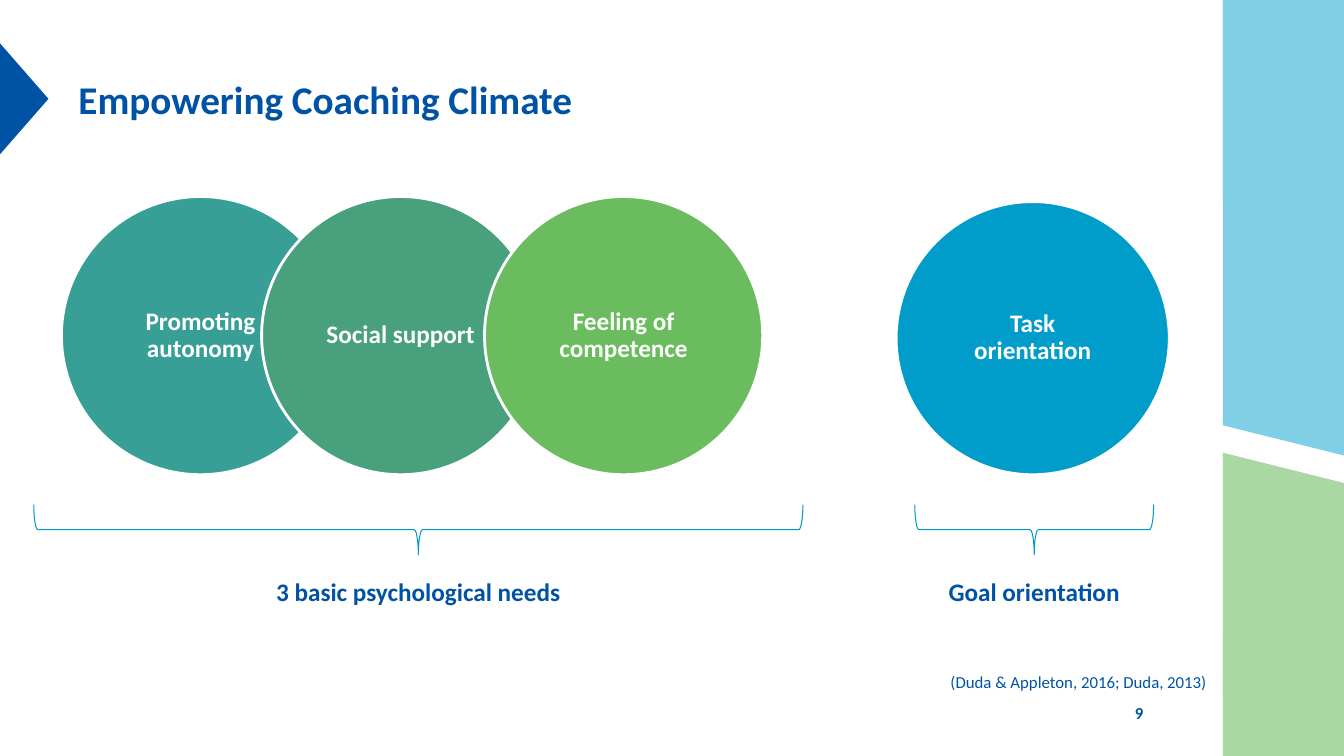
from pptx import Presentation
from pptx.dml.color import RGBColor
from pptx.enum.shapes import MSO_SHAPE as SHAPE
from pptx.enum.text import MSO_ANCHOR as ANCHOR, PP_ALIGN as ALIGN
from pptx.util import Pt

COLORS = {
    "navy": "0053A4", "sky": "81CEE7", "mint": "A9D8A2", "white": "FFFFFF",
    "teal": "379F96", "sea": "48A07D", "green": "6BBC5F", "blue": "009DCA",
    "brace": "009AC6",
}


def color(name):
    return RGBColor.from_string(COLORS[name])


def add_shape(slide, kind, box, fill=None, line=None, line_width=1, rotation=0):
    x, y, w, h = box
    if rotation in (90, 270):
        x, y, w, h = x + (w - h) / 2, y + (h - w) / 2, h, w
    sp = slide.shapes.add_shape(kind, Pt(x), Pt(y), Pt(w), Pt(h))
    sp.shadow.inherit = False
    sp.rotation = rotation
    if fill:
        sp.fill.solid()
        sp.fill.fore_color.rgb = color(fill)
    else:
        sp.fill.background()
    if line:
        sp.line.color.rgb = color(line)
        sp.line.width = Pt(line_width)
    else:
        sp.line.fill.background()
    return sp


def write(tf, text, size, ink="navy", bold=True, align=ALIGN.LEFT, anchor=ANCHOR.TOP):
    tf.word_wrap = True
    tf.vertical_anchor = anchor
    p = tf.paragraphs[0]
    p.alignment = align
    r = p.add_run()
    r.text = text
    r.font.name = "Calibri"
    r.font.size = Pt(size)
    r.font.bold = bold
    r.font.color.rgb = color(ink)
    return p


def add_text(slide, box, text, size, **style):
    sp = slide.shapes.add_textbox(*map(Pt, box))
    write(sp.text_frame, text, size, **style)


def add_sidebar(slide, box):
    x, y, w, h = box
    sky_h, mint_top, mint_h = 325.4, 323.3, 197.3
    add_shape(slide, SHAPE.RECTANGLE, (x, y + 454.3, w, h - 454.3), "mint")
    add_shape(slide, SHAPE.PARALLELOGRAM, (x, y + mint_top, w, mint_h), "mint", rotation=270)
    add_shape(slide, SHAPE.PARALLELOGRAM, (x, y, w, sky_h), "sky", rotation=270)
    add_shape(slide, SHAPE.RECTANGLE, (x, y, w, 141.8), "sky")


def add_header(slide, box, title):
    x, y, w, h = box
    add_shape(slide, SHAPE.ISOSCELES_TRIANGLE, (x, y, 34.6, h), "navy", rotation=90)
    add_text(slide, (x + 49, y, w - 49, h), title, 28, anchor=ANCHOR.MIDDLE)


def add_circle(slide, box, text, fill):
    sp = add_shape(slide, SHAPE.OVAL, box, fill, "white", 2)
    tf = sp.text_frame
    tf.margin_left = tf.margin_right = Pt(10.8)
    tf.margin_top = tf.margin_bottom = Pt(3.6)
    p = write(tf, text, 18, ink="white", align=ALIGN.CENTER, anchor=ANCHOR.MIDDLE)
    p.line_spacing = 0.9


def add_circle_group(slide, box, diameter, circles, label):
    x, y, w, h = box
    for offset, text, fill in circles:
        add_circle(slide, (x + offset, y + 198.7 - diameter, diameter, diameter), text, fill)
    brace = add_shape(slide, SHAPE.RIGHT_BRACE, (x, y + 220, w, 36),
                      line="brace", line_width=0.75, rotation=90)
    brace.adjustments[0] = 0.083
    add_text(slide, (x, y + h - 29, w, 29), label, 18, align=ALIGN.CENTER)


def add_footer(slide, box, source, number):
    x, y, w, h = box
    add_text(slide, (x, y, w, 21.8), source, 12, bold=False)
    add_text(slide, (x + 99.4, y + h - 25.2, 52.6, 25.2), number, 12,
             align=ALIGN.RIGHT, anchor=ANCHOR.MIDDLE)


def main():
    prs = Presentation()
    prs.slide_width, prs.slide_height = Pt(960), Pt(540)
    slide = prs.slides.add_slide(prs.slide_layouts[6])
    add_sidebar(slide, (873.4, 0, 86.6, 540))
    add_header(slide, (0, 31, 823.7, 79.2), "Empowering Coaching Climate")
    needs = [
        (19.8, "Promoting autonomy", "teal"),
        (162.8, "Social support", "sea"),
        (322, "Feeling of competence", "green"),
    ]
    add_circle_group(slide, (24.1, 140.4, 549.4, 296.8), 198.7, needs,
                     "3 basic psychological needs")
    add_circle_group(slide, (653.4, 140.4, 170.6, 296.8), 195.1,
                     [(-13.3, "Task orientation", "blue")], "Goal orientation")
    add_footer(slide, (671.8, 476.6, 223.9, 45.4),
               "(Duda & Appleton, 2016; Duda, 2013)", "9")
    prs.save("out.pptx")


if __name__ == "__main__":
    main()
